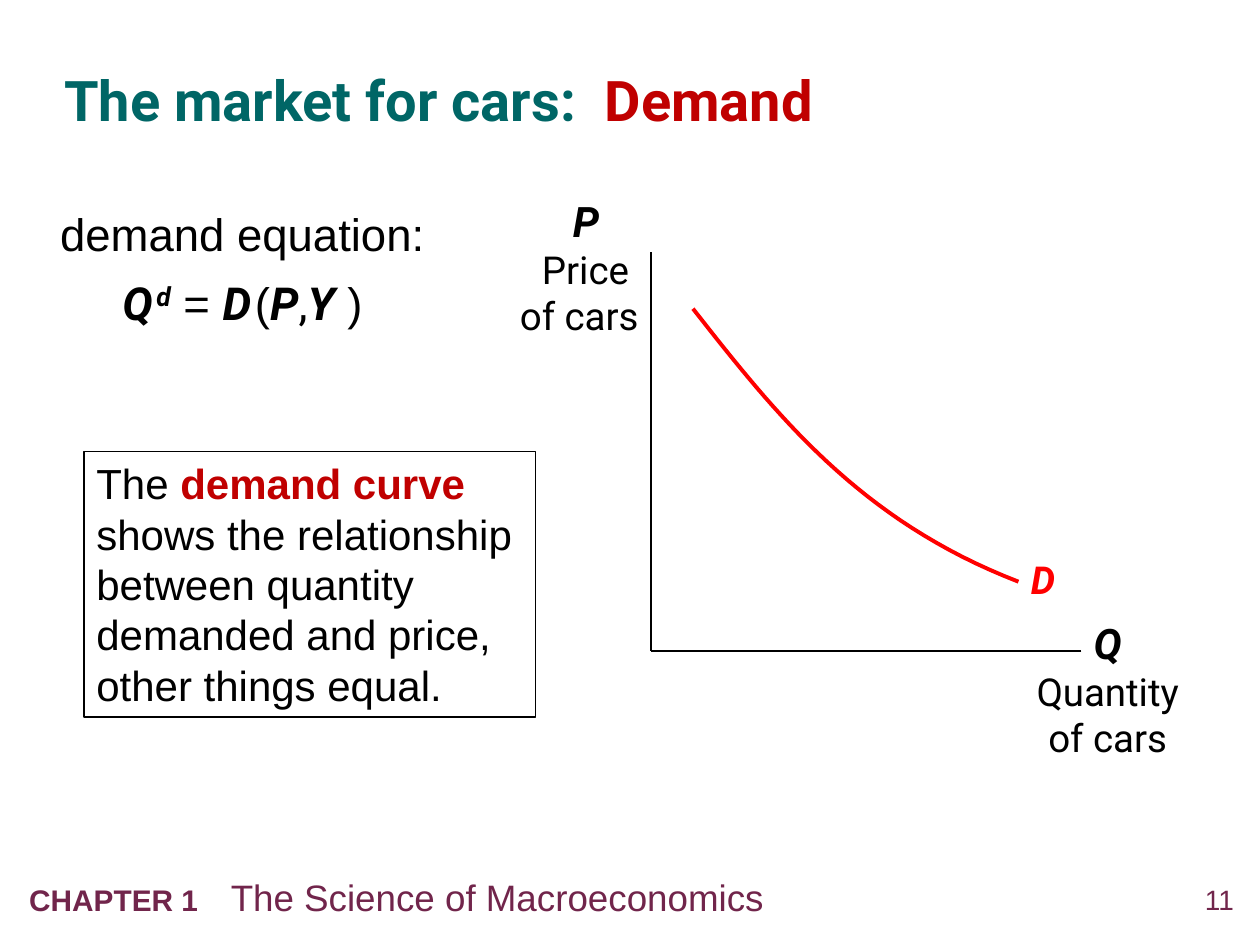
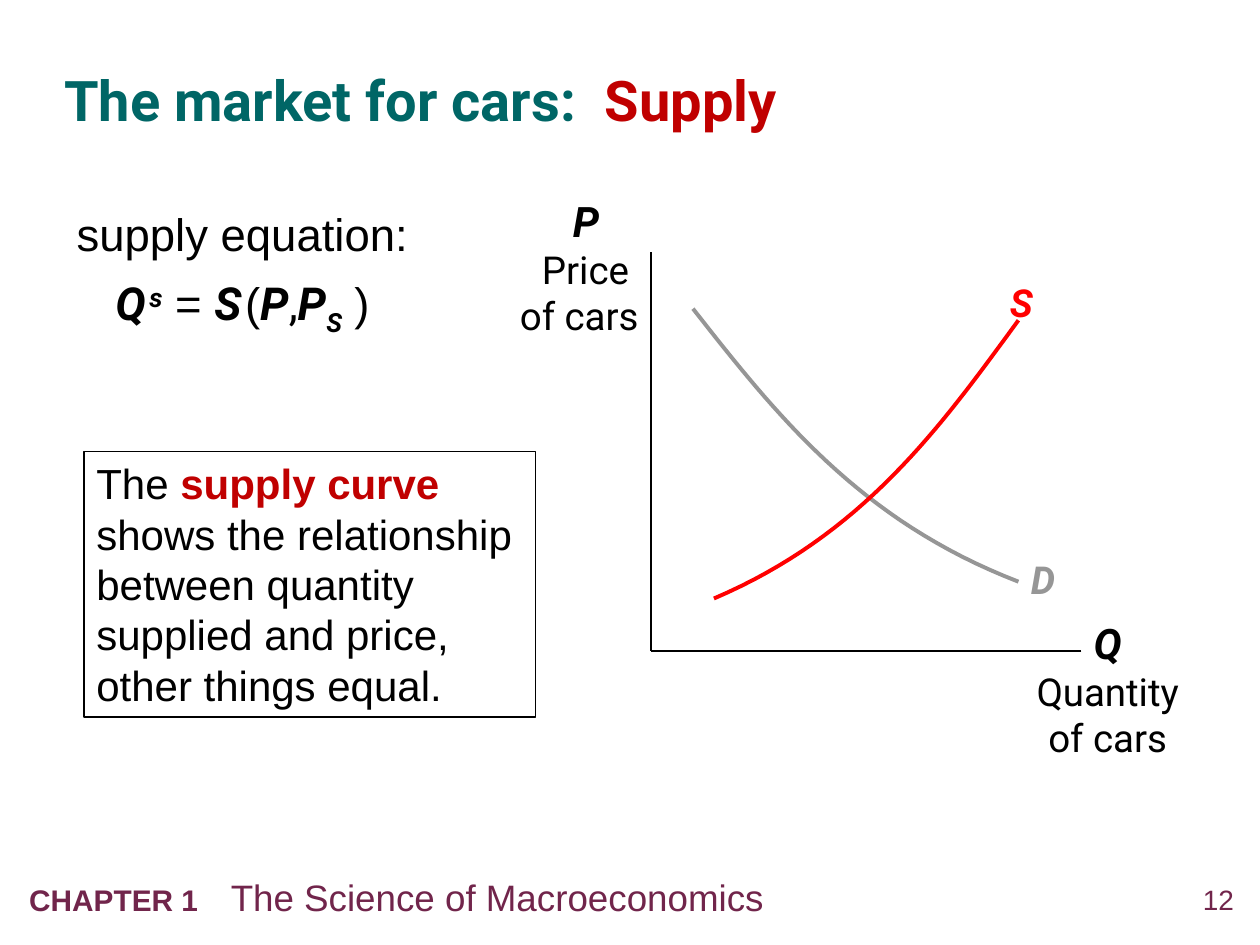
from dataclasses import dataclass
from functools import partial

from lxml.etree import SubElement
from pptx import Presentation
from pptx.dml.color import RGBColor
from pptx.enum.shapes import MSO_CONNECTOR, MSO_SHAPE
from pptx.enum.text import MSO_ANCHOR, PP_ALIGN
from pptx.oxml.ns import qn
from pptx.util import Inches, Pt

COLUMNS, ROWS = 120, 90
WIDTH, HEIGHT = Inches(10), Inches(7.5)
TITLE_ONLY_LAYOUT = 5
CURVE_STEPS = 32


@dataclass(frozen=True)
class Theme:
    """Colours, fonts and type sizes shared by the slides."""
    title: str = "006666"
    accent: str = "C00000"
    footer: str = "71254B"
    ink: str = "000000"
    paper: str = "FFFFFF"
    active: str = "FF0000"
    muted: str = "969696"
    body_font: str = "Arial"
    symbol_font: str = "Roboto"
    title_size: int = 32
    equation_size: int = 26
    note_size: int = 24
    label_size: int = 22
    footer_size: int = 21
    chapter_size: int = 17
    number_size: int = 16
    thin_size: int = 8
    line_spacing: float = 1.05
    axis_width: float = 0.75
    curve_width: float = 2.25


THEME = Theme()


@dataclass(frozen=True)
class Box:
    """A rectangle in grid columns and rows."""
    column: float
    row: float
    columns: float
    rows: float

    def inside(self, column, row, columns=0, rows=0):
        """Return a box offset from this one's top left corner."""
        return Box(self.column + column, self.row + row, columns, rows)

    def place(self):
        """Return left, top, width and height in slide units."""
        return (round(self.column * WIDTH / COLUMNS), round(self.row * HEIGHT / ROWS),
                round(self.columns * WIDTH / COLUMNS), round(self.rows * HEIGHT / ROWS))

    def corner(self):
        """Return the top left point in slide units."""
        return self.place()[:2]


@dataclass(frozen=True)
class Words:
    """A stretch of text in one format, with baseline in percent."""
    text: str
    size: float
    color: str = THEME.ink
    font: str = THEME.body_font
    bold: bool = False
    italic: bool = False
    baseline: int = 0


@dataclass(frozen=True)
class Curve:
    """A named cubic curve and its label, in chart cells."""
    name: str
    points: tuple
    label: tuple


@dataclass(frozen=True)
class Lesson:
    """What differs from one market slide to the next."""
    number: int
    name: str
    verb: str
    equation: tuple
    curves: tuple


Symbol = partial(Words, font=THEME.symbol_font, bold=True, italic=True)
EquationSymbol = partial(Symbol, size=THEME.equation_size)
EquationText = partial(Words, size=THEME.equation_size)
AxisText = partial(Words, size=THEME.label_size, font=THEME.symbol_font)

TITLE_BOX = Box(6.1, 3.1, 108.2, 12.4)
FOOTER_BOX = Box(1.6, 82.7, 115.9, 5.4)
EQUATION_BOX = Box(3, 18.8, 40.2, 13.4)
NOTE_BOX = Box(8, 43, 43, 25.3)
CHART_BOX = Box(47, 18, 67, 55)

DEMAND = Curve("D", ((19, 11.4), (26.92, 21.48), (34.84, 31.56), (50, 37.4)), (50, 34.4))
SUPPLY = Curve("S", ((50, 12.5), (42.5, 22.8), (35.1, 33), (21, 39)), (48, 8))


def equation(index, function, *last_term):
    """Return the runs of a quantity equation."""
    thin_space = Symbol(" ", THEME.thin_size)
    return (EquationSymbol("Q"), thin_space, EquationSymbol(index, baseline=30),
            EquationText(" = "), EquationSymbol(function), thin_space,
            EquationText("("), EquationSymbol("P"),
            EquationText(",", font=THEME.symbol_font), *last_term, EquationText(" )"))


LESSONS = (
    Lesson(11, "Demand", "demanded", equation("d", "D", EquationSymbol("Y")), (DEMAND,)),
    Lesson(12, "Supply", "supplied",
           equation("s", "S", EquationSymbol("P"), EquationSymbol("S", baseline=-25)),
           (DEMAND, SUPPLY)),
)


def write(paragraph, *words, align=PP_ALIGN.LEFT, spacing=1.0):
    """Fill a paragraph run by run."""
    paragraph.alignment = align
    paragraph.line_spacing = spacing
    paragraph.space_before = Pt(0)
    for part in words:
        run = paragraph.add_run()
        run.text = part.text
        font = run.font
        font.name, font.size = part.font, Pt(part.size)
        font.bold, font.italic = part.bold, part.italic
        font.color.rgb = RGBColor.from_string(part.color)
        if part.baseline:
            font._element.set("baseline", str(part.baseline * 1000))


def clear_margins(frame):
    """Remove the insets of a text frame."""
    frame.margin_left = frame.margin_right = frame.margin_top = frame.margin_bottom = 0


def add_text(slide, box, *words, **layout):
    """Add a wrapping text box and return its frame."""
    frame = slide.shapes.add_textbox(*box.place()).text_frame
    frame.word_wrap = True
    write(frame.paragraphs[0], *words, **layout)
    return frame


def style_line(line, color, width):
    """Set a line's colour and width."""
    line.color.rgb = RGBColor.from_string(color)
    line.width = Pt(width)


def add_title(slide, box, name):
    """Place the two-colour title."""
    title = slide.shapes.title
    title.left, title.top, title.width, title.height = box.place()
    frame = title.text_frame
    clear_margins(frame)
    frame.vertical_anchor = MSO_ANCHOR.MIDDLE
    heading = partial(Words, size=THEME.title_size, font=THEME.symbol_font, bold=True)
    write(frame.paragraphs[0], heading("The market for cars: ", color=THEME.title),
          heading(f" {name}", color=THEME.accent), spacing=THEME.line_spacing)


def add_footer(slide, box, number):
    """Place the chapter line and the slide number."""
    footer_words = partial(Words, color=THEME.footer)
    frame = add_text(slide, box.inside(0, 0, 98.2, box.rows),
                     footer_words("CHAPTER 1\t", THEME.chapter_size, bold=True),
                     footer_words("The Science of Macroeconomics", THEME.footer_size))
    tabs = SubElement(frame.paragraphs[0]._p.get_or_add_pPr(), qn("a:tabLst"))
    SubElement(tabs, qn("a:tab"), pos=str(Inches(1.6)), algn="l")
    number_frame = add_text(slide, box.inside(box.columns - 6.6, 1.4, 6.6, 3.8),
                            footer_words(str(number), THEME.number_size),
                            align=PP_ALIGN.RIGHT)
    clear_margins(number_frame)


def add_axis(slide, start, end):
    """Draw one axis between two grid points."""
    axis = slide.shapes.add_connector(MSO_CONNECTOR.STRAIGHT, *start.corner(), *end.corner())
    style_line(axis.line, THEME.ink, THEME.axis_width)
    SubElement(axis._element.spPr, qn("a:effectLst"))


def add_axes(slide, box):
    """Draw the price and quantity axes with their labels."""
    origin = box.inside(15, 44)
    for end in (box.inside(15, 6), box.inside(56, 44)):
        add_axis(slide, end, origin)
    add_text(slide, box.inside(50, 40.2, 17, 14.8), Symbol("Q", THEME.note_size),
             AxisText(" Quantity of cars"), align=PP_ALIGN.CENTER)
    frame = add_text(slide, box.inside(0, 0, 15, 14.8), Symbol("P", THEME.note_size),
                     align=PP_ALIGN.CENTER)
    frame.paragraphs[0]._p.get_or_add_pPr().set("marL", str(Inches(0.22)))
    for text in ("Price ", "of cars"):
        write(frame.add_paragraph(), AxisText(text), align=PP_ALIGN.RIGHT)


def curve_point(points, share):
    """Return the cubic curve's point at a share of its course."""
    rest = 1 - share
    weights = (rest ** 3, 3 * rest ** 2 * share, 3 * rest * share ** 2, share ** 3)
    return [sum(weight * value for weight, value in zip(weights, values))
            for values in zip(*points)]


def add_curve(slide, box, curve, color):
    """Draw a curve and its letter."""
    start, *others = [box.inside(*curve_point(curve.points, step / CURVE_STEPS)).corner()
                      for step in range(CURVE_STEPS + 1)]
    builder = slide.shapes.build_freeform(*start)
    builder.add_line_segments(others, close=False)
    shape = builder.convert_to_shape()
    shape.shadow.inherit = False
    shape.fill.background()
    style_line(shape.line, color, THEME.curve_width)
    add_text(slide, box.inside(*curve.label, 6, 5.6),
             Symbol(curve.name, THEME.label_size, color=color))


def add_chart_region(slide, box, curves):
    """Draw the axes and curves, with only the last curve highlighted."""
    add_axes(slide, box)
    for curve in curves:
        add_curve(slide, box, curve, THEME.active if curve is curves[-1] else THEME.muted)


def add_note(slide, box, lesson):
    """Place the framed explanation of the curve."""
    shape = slide.shapes.add_shape(MSO_SHAPE.RECTANGLE, *box.place())
    shape.shadow.inherit = False
    shape.fill.solid()
    shape.fill.fore_color.rgb = RGBColor.from_string(THEME.paper)
    style_line(shape.line, THEME.ink, THEME.axis_width)
    frame = shape.text_frame
    frame.word_wrap = True
    frame.vertical_anchor = MSO_ANCHOR.TOP
    note = partial(Words, size=THEME.note_size)
    write(frame.paragraphs[0], note("The "),
          note(f"{lesson.name.lower()} curve", color=THEME.accent, bold=True),
          note(" shows the relationship between quantity "
               f"{lesson.verb} and price, other things equal."))


def add_equation(slide, box, lesson):
    """Place the equation under its heading."""
    layout = {"align": PP_ALIGN.CENTER, "spacing": THEME.line_spacing}
    frame = add_text(slide, box, EquationText(f"{lesson.name.lower()} equation:"), **layout)
    formula = frame.add_paragraph()
    write(formula, *lesson.equation, **layout)
    formula.space_before = Pt(6.5)


def add_lesson(presentation, lesson):
    """Add one market slide."""
    slide = presentation.slides.add_slide(presentation.slide_layouts[TITLE_ONLY_LAYOUT])
    add_footer(slide, FOOTER_BOX, lesson.number)
    add_title(slide, TITLE_BOX, lesson.name)
    add_chart_region(slide, CHART_BOX, lesson.curves)
    add_note(slide, NOTE_BOX, lesson)
    add_equation(slide, EQUATION_BOX, lesson)


def main():
    """Build and save the presentation."""
    presentation = Presentation()
    presentation.slide_width, presentation.slide_height = WIDTH, HEIGHT
    for lesson in LESSONS:
        add_lesson(presentation, lesson)
    presentation.save("out.pptx")


if __name__ == "__main__":
    main()
